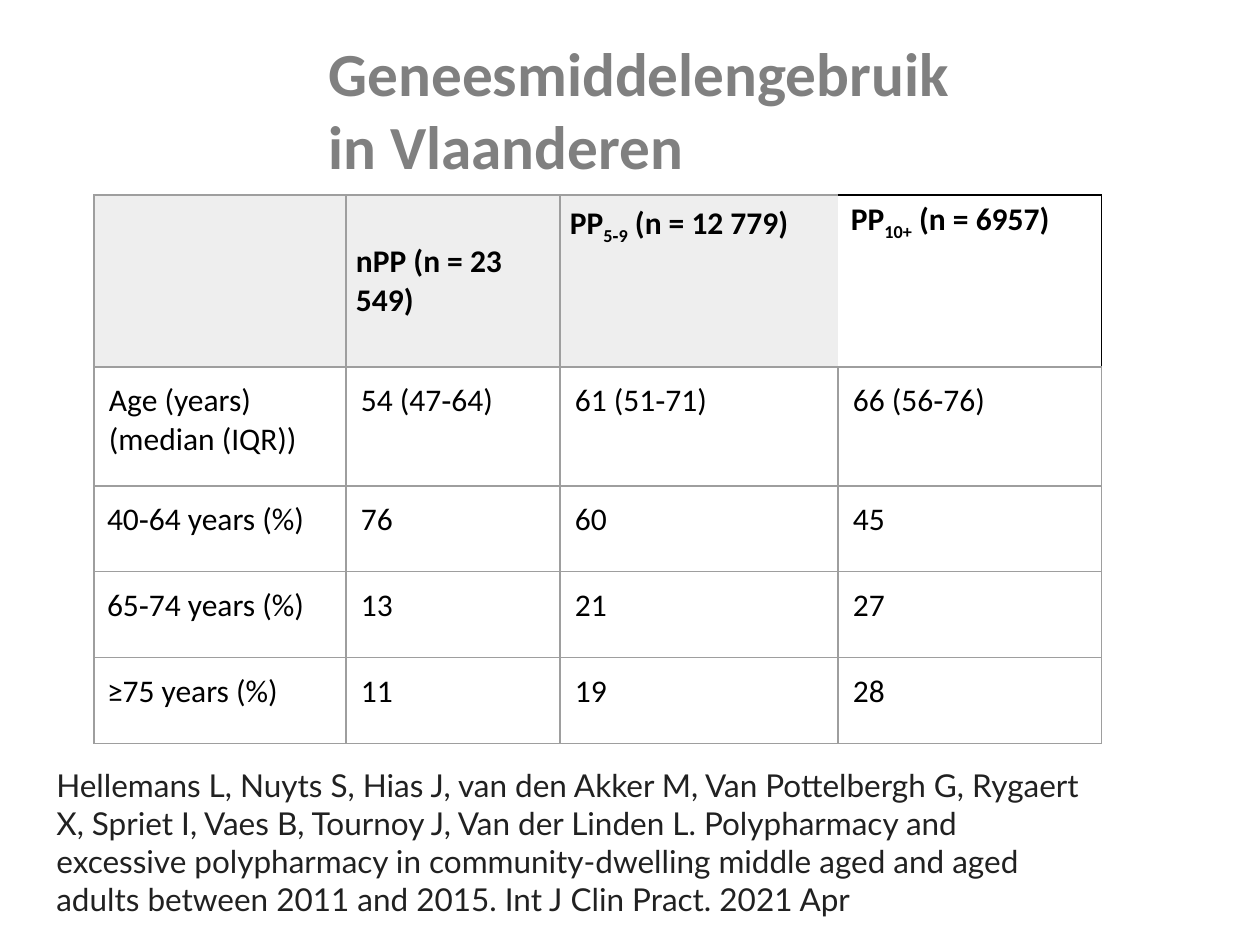
from lxml import etree
from pptx import Presentation
from pptx.dml.color import RGBColor
from pptx.enum.text import MSO_ANCHOR, MSO_AUTO_SIZE, PP_ALIGN
from pptx.oxml.ns import qn
from pptx.util import Emu, Pt

PX = 914400 / 126
TOP, MIDDLE = MSO_ANCHOR.TOP, MSO_ANCHOR.MIDDLE
LEFT = PP_ALIGN.LEFT
NO_AUTOFIT = MSO_AUTO_SIZE.NONE

BLACK = RGBColor(0x00, 0x00, 0x00)
WHITE = RGBColor(0xFF, 0xFF, 0xFF)
TITLE_GRAY = RGBColor(0x80, 0x80, 0x80)
HEADER_GRAY = RGBColor(0xEE, 0xEE, 0xEE)
GRID_GRAY = RGBColor(0x9E, 0x9E, 0x9E)
CITATION_GRAY = RGBColor(0x21, 0x21, 0x21)

COLUMN_WIDTHS = [252, 214, 278, 264]
ROW_HEIGHTS = [172, 119, 86, 86, 86]
# Each cell is a list of (text, is subscript) runs or plain text.
ROWS = [
    ["", "nPP (n = 23 549)",
     [("PP", False), ("5‐9", True), (" (n = 12 779)", False)],
     [("PP", False), ("10+", True), (" (n = 6957)", False)]],
    ["Age (years) (median (IQR))", "54 (47‐64)", "61 (51‐71)", "66 (56‐76)"],
    ["40‐64 years (%)", "76", "60", "45"],
    ["65‐74 years (%)", "13", "21", "27"],
    ["≥75 years (%)", "11", "19", "28"],
]
CITATION = (
    "Hellemans L, Nuyts S, Hias J, van den Akker M, Van Pottelbergh G, "
    "Rygaert X, Spriet I, Vaes B, Tournoy J, Van der Linden L. Polypharmacy "
    "and excessive polypharmacy in community-dwelling middle aged and aged "
    "adults between 2011 and 2015. Int J Clin Pract. 2021 Apr"
)


def px(length):
    return Emu(round(length * PX))


def set_borders(cell, colors):
    """Draw the left, right, top and bottom borders; None leaves a side open."""
    properties = cell._tc.get_or_add_tcPr()
    for position, (side, color) in enumerate(zip("LRTB", colors)):
        line = etree.Element(qn(f"a:ln{side}"), w=str(Pt(0.75)))
        if color is None:
            etree.SubElement(line, qn("a:noFill"))
        else:
            fill = etree.SubElement(line, qn("a:solidFill"))
            etree.SubElement(fill, qn("a:srgbClr"), val=str(color))
        properties.insert(position, line)


presentation = Presentation()
presentation.slide_width = px(1260)
presentation.slide_height = px(945)
slide = presentation.slides.add_slide(presentation.slide_layouts[5])

title = slide.shapes.title
title.left, title.top, title.width, title.height = map(px, (316, 19, 1259, 179))
title.text_frame.text = "Geneesmiddelengebruik\vin Vlaanderen"
title.text_frame.auto_size = NO_AUTOFIT
title.text_frame.vertical_anchor = MIDDLE
paragraph = title.text_frame.paragraphs[0]
paragraph.alignment = LEFT
for run in paragraph.runs:
    for name, value in {"name": "Calibri", "size": Pt(35), "bold": True}.items():
        setattr(run.font, name, value)
    run.font.color.rgb = TITLE_GRAY

citation = slide.shapes.add_textbox(px(44), px(760), px(1058), px(165))
citation.text_frame.word_wrap = True
citation.text_frame.text = CITATION
font = citation.text_frame.paragraphs[0].runs[0].font
for name, value in {"name": "Lato", "size": Pt(18)}.items():
    setattr(font, name, value)
font.color.rgb = CITATION_GRAY

table = slide.shapes.add_table(
    len(ROWS), len(COLUMN_WIDTHS), px(94), px(195),
    px(sum(COLUMN_WIDTHS)), px(sum(ROW_HEIGHTS))).table
table.horz_banding = False
for column, width in zip(table.columns, COLUMN_WIDTHS):
    column.width = px(width)
for row, height in zip(table.rows, ROW_HEIGHTS):
    row.height = px(height)

for row_index, row in enumerate(ROWS):
    for column_index, content in enumerate(row):
        cell = table.cell(row_index, column_index)
        is_header = row_index == 0
        is_open = is_header and column_index == 3
        if is_open:
            margins = (13, 6, 13, 6)
        elif is_header:
            margins = (10, 10, 10, 10)
        else:
            left = 13 if column_index == 0 and row_index > 1 else 15
            margins = (left, 15, 15, 6)
        for side, margin in zip(("left", "top", "right", "bottom"), margins):
            setattr(cell, f"margin_{side}", px(margin))
        cell.vertical_anchor = MIDDLE if is_header and column_index == 1 else TOP

        if is_open:
            cell.fill.background()
            set_borders(cell, (None, BLACK, BLACK, GRID_GRAY))
        else:
            cell.fill.solid()
            cell.fill.fore_color.rgb = HEADER_GRAY if is_header else WHITE
            right = None if is_header and column_index == 2 else GRID_GRAY
            set_borders(cell, (GRID_GRAY, right, GRID_GRAY, GRID_GRAY))

        paragraph = cell.text_frame.paragraphs[0]
        runs = [(content, False)] if isinstance(content, str) else content
        for text, is_subscript in runs:
            if not text:
                continue
            run = paragraph.add_run()
            run.text = text
            font_format = {"name": "Calibri", "size": Pt(18), "bold": is_header}
            for name, value in font_format.items():
                setattr(run.font, name, value)
            run.font.color.rgb = BLACK
            if is_subscript:
                run.font._element.set("baseline", "-25000")

presentation.save("out.pptx")
